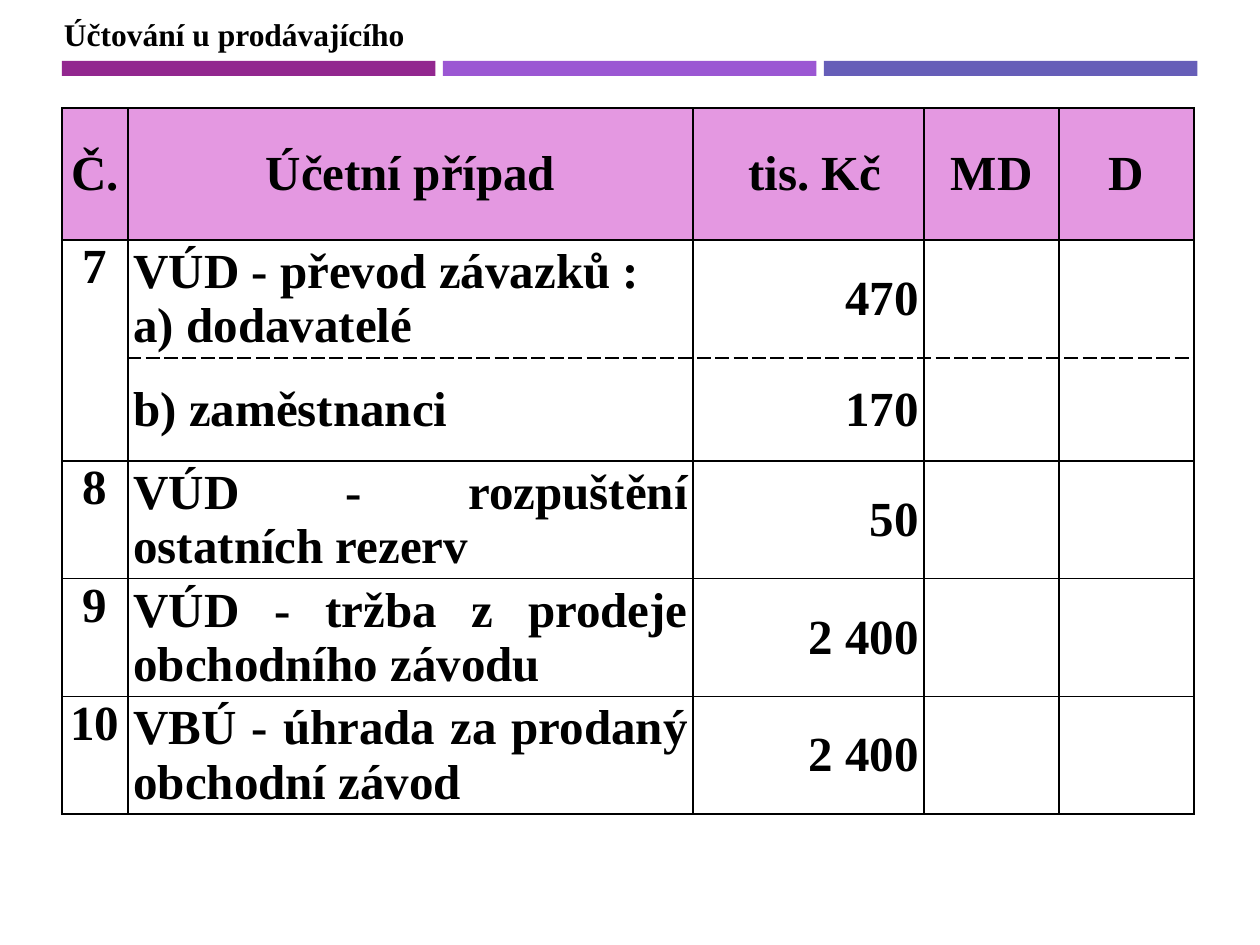
from dataclasses import dataclass

from lxml.etree import SubElement
from pptx import Presentation
from pptx.dml.color import RGBColor
from pptx.enum.shapes import MSO_SHAPE
from pptx.enum.text import MSO_ANCHOR, MSO_AUTO_SIZE, PP_ALIGN
from pptx.oxml.ns import qn
from pptx.slide import Slide
from pptx.table import _Cell
from pptx.text.text import TextFrame
from pptx.util import Cm, Pt

FONT = "Times New Roman"
COLORS = {
    "text": "000000",
    "border": "000000",
    "header": "E498E1",
    "purple": "92278F",
    "violet": "9B57D3",
    "blue": "665EB8",
}


@dataclass
class Entry:
    number: str
    case: str
    amount: str
    height: float
    dashed_top: bool = False
    dashed_bottom: bool = False


HEADER = ["Č.", "Účetní případ", " tis. Kč", "MD", "D"]
HEADER_HEIGHT = 2.66
COLUMN_WIDTHS = [1.33, 11.39, 4.66, 2.72, 2.72]
COLUMN_ALIGNS = [PP_ALIGN.CENTER, PP_ALIGN.JUSTIFY, PP_ALIGN.RIGHT, PP_ALIGN.CENTER, PP_ALIGN.CENTER]
ENTRIES = [
    Entry("7", "VÚD - převod závazků :\na) dodavatelé", "470", 2.37, dashed_bottom=True),
    Entry("", "b) zaměstnanci", "170", 2.08, dashed_top=True),
    Entry("8", "VÚD - rozpuštění ostatních rezerv", "50", 2.37),
    Entry("9", "VÚD - tržba z prodeje obchodního závodu", "2 400", 2.37),
    Entry("10", "VBÚ - úhrada za prodaný obchodní závod", "2 400", 2.37),
]


def color(name: str) -> RGBColor:
    return RGBColor.from_string(COLORS[name])


def write(frame: TextFrame, text: str, size: int, align: PP_ALIGN) -> None:
    frame.text = text
    for paragraph in frame.paragraphs:
        paragraph.alignment = align
        for span in paragraph.runs:
            span.font.name = FONT
            span.font.size = Pt(size)
            span.font.bold = True
            span.font.color.rgb = color("text")


def draw_bars(page: Slide) -> None:
    for index, name in enumerate(["purple", "violet", "blue"]):
        bar = page.shapes.add_shape(
            MSO_SHAPE.RECTANGLE, Cm(1.25 + index * 7.68), Cm(1.23), Cm(7.53), Cm(0.3))
        bar.shadow.inherit = False
        bar.fill.solid()
        bar.fill.fore_color.rgb = color(name)
        bar.line.fill.background()


def draw_title(page: Slide) -> None:
    box = page.shapes.add_textbox(Cm(1.04), Cm(0.18), Cm(7.44), Cm(1.02))
    box.text_frame.word_wrap = False
    box.text_frame.auto_size = MSO_AUTO_SIZE.SHAPE_TO_FIT_TEXT
    write(box.text_frame, "Účtování u prodávajícího", 18, PP_ALIGN.LEFT)


def set_borders(cell: _Cell, dashed: set[str]) -> None:
    properties = cell._tc.get_or_add_tcPr()
    for index, side in enumerate(["lnL", "lnR", "lnT", "lnB"]):
        line = SubElement(properties, qn(f"a:{side}"), w=str(Pt(1)))
        fill = SubElement(line, qn("a:solidFill"))
        SubElement(fill, qn("a:srgbClr"), val=COLORS["border"])
        SubElement(line, qn("a:prstDash"), val="dash" if side in dashed else "solid")
        properties.insert(index, line)  # borders precede the fill


def fill_cell(cell: _Cell, text: str, align: PP_ALIGN, anchor: MSO_ANCHOR) -> None:
    cell.margin_left = cell.margin_right = Cm(0.11)
    cell.margin_top = cell.margin_bottom = 0
    cell.vertical_anchor = anchor
    write(cell.text_frame, text, 28, align)


def draw_table(page: Slide) -> None:
    heights = [HEADER_HEIGHT] + [entry.height for entry in ENTRIES]
    table = page.shapes.add_table(
        len(heights), len(HEADER), Cm(1.25), Cm(2.18),
        Cm(sum(COLUMN_WIDTHS)), Cm(sum(heights))).table
    table.first_row = table.horz_banding = False
    for column, width in zip(table.columns, COLUMN_WIDTHS):
        column.width = Cm(width)
    for row, height in zip(table.rows, heights):
        row.height = Cm(height)

    # Header row
    for cell, text in zip(table.rows[0].cells, HEADER):
        fill_cell(cell, text, PP_ALIGN.CENTER, MSO_ANCHOR.MIDDLE)
        cell.fill.solid()
        cell.fill.fore_color.rgb = color("header")
        set_borders(cell, set())

    # Accounting entries, with the last two columns left open
    for row_index, entry in enumerate(ENTRIES, start=1):
        texts = [entry.number, entry.case, entry.amount, "", ""]
        for column_index, text in enumerate(texts):
            cell = table.cell(row_index, column_index)
            anchor = MSO_ANCHOR.MIDDLE if column_index else MSO_ANCHOR.TOP
            fill_cell(cell, text, COLUMN_ALIGNS[column_index], anchor)
            cell.fill.background()
            dashed = set()
            if column_index and entry.dashed_top:
                dashed.add("lnT")
            if column_index and entry.dashed_bottom:
                dashed.add("lnB")
            set_borders(cell, dashed)

    # Entry 7 spans its two parts
    table.cell(1, 0).merge(table.cell(2, 0))


def main() -> None:
    deck = Presentation()
    deck.slide_width, deck.slide_height = Cm(25.4), Cm(19.05)
    page = deck.slides.add_slide(deck.slide_layouts[6])
    draw_bars(page)
    draw_title(page)
    draw_table(page)
    deck.save("out.pptx")


if __name__ == "__main__":
    main()
